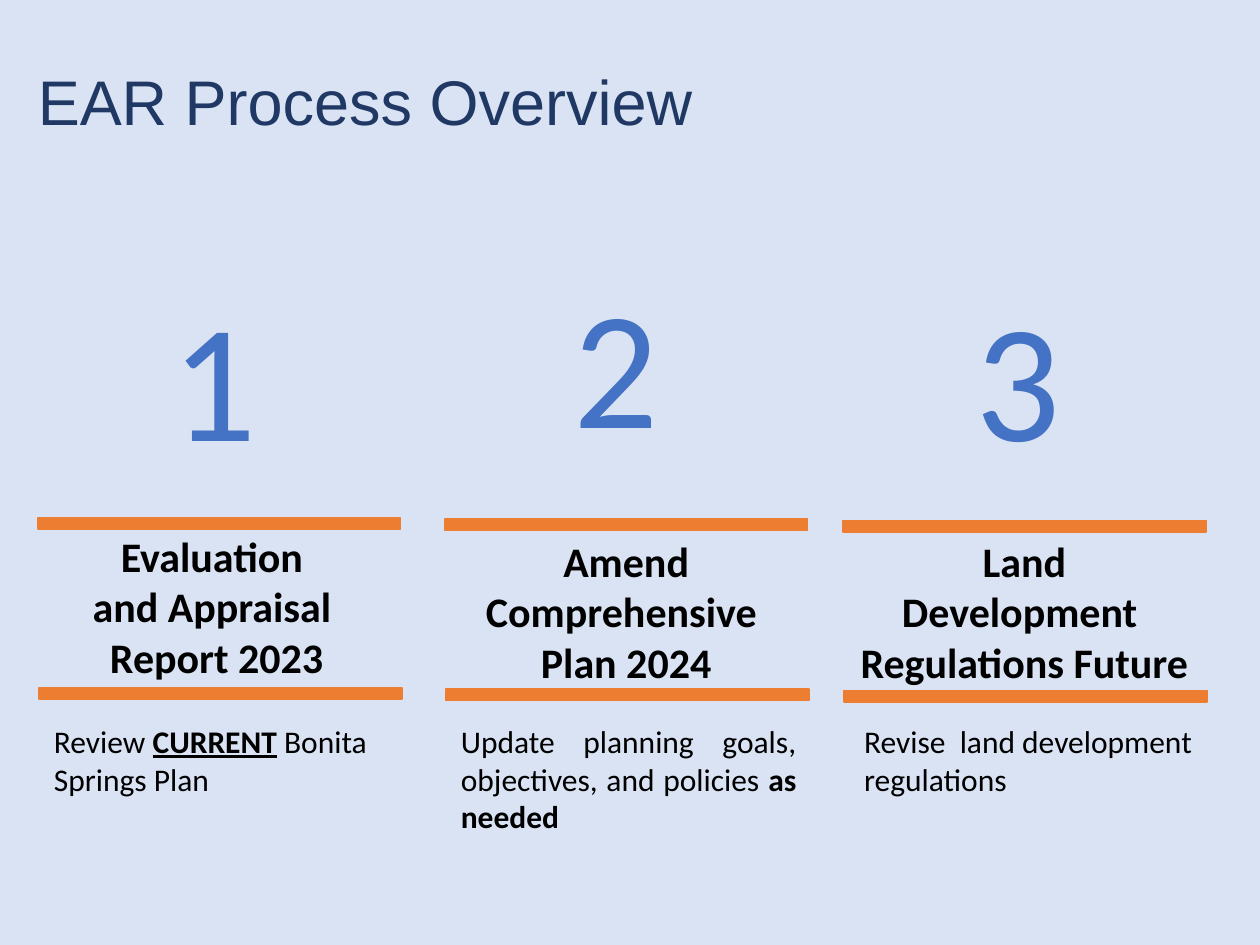
import pptx
import pptx.dml.color
import pptx.enum.shapes
import pptx.enum.text
import pptx.util

Inches = pptx.util.Inches
ALIGN = pptx.enum.text.PP_ALIGN
ANCHOR = pptx.enum.text.MSO_ANCHOR

COLORS = {
    "background": "DAE3F3",
    "title": "203864",
    "number": "4472C4",
    "bar": "ED7D31",
    "text": "000000",
}
TITLE = "EAR Process Overview"
STEPS = [
    {
        "number": "1", "number_box": (0.84, 2.12),
        "heading": ["Evaluation ", "and Appraisal ", "Report 2023"],
        "heading_box": (0.3, 4.16, 2.84), "bar": (0.3, 4.11),
        "detail": [("Review ", ""), ("CURRENT", "bold underline"), (" Bonita Springs Plan", "")],
        "detail_box": (0.33, 2.86, 0.71), "align": ALIGN.LEFT,
    },
    {
        "number": "2", "number_box": (4.03, 2.02),
        "heading": ["Amend", "Comprehensive ", "Plan 2024"],
        "heading_box": (3.54, 4.2, 2.86), "bar": (3.53, 4.12),
        "detail": [("Update planning goals, objectives, and policies ", ""), ("as needed", "bold")],
        "detail_box": (3.56, 2.86, 1.01), "align": ALIGN.JUSTIFY,
    },
    {
        "number": "3", "number_box": (7.22, 2.12),
        "heading": ["Land", "Development ", "Regulations Future"],
        "heading_box": (6.69, 4.2, 2.88), "bar": (6.69, 4.13),
        "detail": [("Revise  land development regulations", "")],
        "detail_box": (6.76, 3.08, 0.71), "align": ALIGN.LEFT,
    },
]
NUMBER_SIZE = 1.72
HEADING_HEIGHT = 1.31
DETAIL_TOP = 5.68
BAR_WIDTH, BAR_HEIGHT = 2.88, 0.09
LOWER_BAR_SHIFT = (0.01, 1.35)


def rgb(name):
    return pptx.dml.color.RGBColor.from_string(COLORS[name])


def style_run(run, size, color, style="", font="Calibri"):
    run.font.name = font
    run.font.size = pptx.util.Pt(size)
    run.font.color.rgb = rgb(color)
    run.font.bold = "bold" in style
    run.font.underline = "underline" in style


def add_text(slide, box, paragraphs, size, color, align):
    shape = slide.shapes.add_textbox(*map(Inches, box))
    text_frame = shape.text_frame
    text_frame.word_wrap = True
    text_frame.auto_size = pptx.enum.text.MSO_AUTO_SIZE.SHAPE_TO_FIT_TEXT
    text_frame.text = "\n".join("" for _ in paragraphs)
    for paragraph, pieces in zip(text_frame.paragraphs, paragraphs):
        paragraph.alignment = align
        for text, style in pieces:
            run = paragraph.add_run()
            run.text = text
            style_run(run, size, color, style)


def add_bar(slide, left, top):
    box = map(Inches, (left, top, BAR_WIDTH, BAR_HEIGHT))
    shape = slide.shapes.add_shape(pptx.enum.shapes.MSO_SHAPE.RECTANGLE, *box)
    shape.shadow.inherit = False
    shape.fill.solid()
    shape.fill.fore_color.rgb = rgb("bar")
    shape.line.color.rgb = rgb("bar")
    shape.line.width = pptx.util.Pt(1)


def add_title(slide):
    title = slide.shapes.title
    title.left, title.top, title.width, title.height = map(Inches, (0.2, 0.17, 6.66, 1.33))
    title.text_frame.text = TITLE
    title.text_frame.vertical_anchor = ANCHOR.MIDDLE
    paragraph = title.text_frame.paragraphs[0]
    paragraph.alignment = ALIGN.LEFT
    paragraph.line_spacing = 0.9
    style_run(paragraph.runs[0], 36, "title", font="Arial")


def add_step(slide, step):
    number_box = (*step["number_box"], NUMBER_SIZE, NUMBER_SIZE)
    add_text(slide, number_box, [[(step["number"], "")]], 96, "number", ALIGN.CENTER)

    heading = [[(line, "bold")] for line in step["heading"]]
    add_text(slide, (*step["heading_box"], HEADING_HEIGHT), heading, 24, "text", ALIGN.CENTER)

    left, top = step["bar"]
    add_bar(slide, left, top)
    add_bar(slide, left + LOWER_BAR_SHIFT[0], top + LOWER_BAR_SHIFT[1])

    left, width, height = step["detail_box"]
    add_text(slide, (left, DETAIL_TOP, width, height), [step["detail"]], 18, "text", step["align"])


def main():
    presentation = pptx.Presentation()
    presentation.slide_width = Inches(10)
    presentation.slide_height = Inches(7.5)
    slide = presentation.slides.add_slide(presentation.slide_layouts[5])
    slide.background.fill.solid()
    slide.background.fill.fore_color.rgb = rgb("background")
    add_title(slide)
    for step in STEPS:
        add_step(slide, step)
    presentation.save("out.pptx")


if __name__ == "__main__":
    main()
